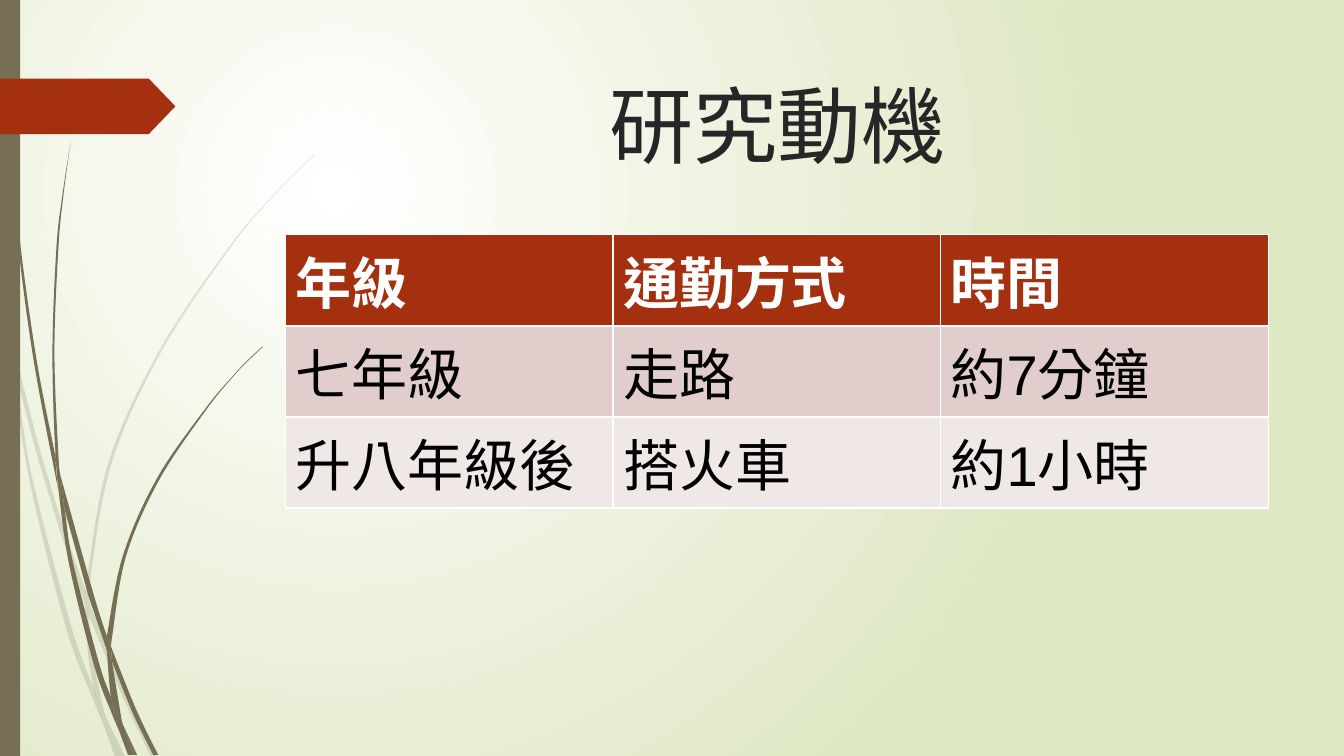
from lxml import etree
from pptx import Presentation, util as u
from pptx.dml.color import RGBColor
from pptx.enum import lang, shapes, text
from pptx.oxml import ns

PX = 9144
OLIVE, RUST, WHITE = "766F54", "A53010", "FFFFFF"

PALE_BLADES = [
    [[(11, 350), (9, 322), (0, 282)], [(0, 299), (10, 344), (11, 350)]],
    [[(58, 522), (84, 599)], [(85, 586), (62, 520), (36, 433), (14, 345)],
     [(17, 376), (36, 449), (58, 522)]],
    [[(92, 607), (88, 596)], [(88, 610), (123, 694), (150, 751)],
     [(155, 751), (127, 692), (92, 607)]],
    [[(119, 751), (124, 751)], [(105, 711), (119, 751)]],
    [[(93, 683), (70, 619), (31, 469), (17, 376), (11, 350)],
     [(11, 350), (28, 470), (65, 621), (92, 693), (101, 714)], [(99, 707), (93, 683)]],
    [[(84, 599), (87, 646), (93, 683), (96, 692), (105, 711)],
     [(103, 706), (91, 646), (88, 610)], [(88, 608), (84, 599)]],
    [[(88, 584), (110, 462), (160, 349), (229, 245), (268, 198), (290, 175), (312, 154)],
     [(312, 153), (289, 175), (268, 197), (228, 244), (158, 348), (107, 461), (85, 584)],
     [(85, 586), (88, 596)]],
    [[(101, 714), (114, 751)], [(119, 751), (101, 714)]],
    [[(88, 608), (88, 610)], [(88, 596), (85, 586)], [(84, 599), (88, 608)]],
    [[(96, 692), (93, 683)], [(99, 707), (101, 714), (119, 751)], [(105, 711), (96, 692)]],
]
DARK_BLADES = [
    [[(7, 110), (17, 233), (33, 355), (56, 477), (57, 481)],
     [(55, 457), (55, 453), (36, 355), (19, 232), (8, 109), (5, 48), (4, 0)],
     [(3, 0), (4, 48), (7, 110)]],
    [[(88, 592), (106, 645)], [(106, 633), (106, 631), (93, 590), (60, 472)],
     [(64, 505), (88, 592)]],
    [[(113, 649), (110, 641)], [(111, 656), (132, 708), (152, 749)],
     [(157, 749), (136, 706), (113, 649)]],
    [[(110, 691), (98, 657), (72, 556), (64, 505), (57, 477)],
     [(57, 477), (68, 557), (93, 659), (111, 708), (117, 722)], [(116, 717), (110, 691)]],
    [[(60, 472), (58, 453), (54, 349), (58, 245), (63, 193), (70, 141)],
     [(70, 141), (62, 193), (56, 245), (52, 349), (55, 449), (60, 472)]],
    [[(133, 749), (136, 749)], [(122, 719), (133, 749)]],
    [[(57, 477), (64, 505)], [(60, 472), (55, 449)], [(55, 453), (57, 477)]],
    [[(111, 633), (125, 552), (158, 476), (205, 406), (231, 374), (245, 359), (261, 344)],
     [(260, 344), (245, 358), (231, 373), (204, 405), (156, 474), (122, 551), (106, 631)],
     [(110, 641), (111, 633)]],
    [[(117, 722), (127, 749)], [(131, 749), (117, 722)]],
    [[(106, 645), (110, 691), (116, 706), (122, 719)],
     [(121, 716), (111, 656)], [(109, 651), (106, 645)]],
    [[(106, 645), (109, 651), (111, 656)], [(110, 641), (106, 631)], [(106, 633), (106, 645)]],
    [[(116, 706), (110, 691)], [(116, 717), (117, 722), (130, 749)],
     [(133, 749), (122, 719), (116, 706)]],
]
COMMUTES = [
    ["年級", "通勤方式", "時間"],
    ["七年級", "走路", "約7分鐘"],
    ["升八年級後", "搭火車", "約1小時"],
]


def px(length):
    """Turn px into EMU."""
    return u.Emu(round(length * PX))


def rgb(code):
    """Turn a hex string into a colour."""
    return RGBColor.from_string(code)


def paint(shape, code):
    """Fill a shape flat, without line or shadow."""
    shape.fill.solid()
    shape.fill.fore_color.rgb = rgb(code)
    shape.line.fill.background()
    shape.shadow.inherit = False


def style_run(run, font, size, code, bold=False):
    """Format a run of Traditional Chinese text."""
    run.font.name, run.font.size, run.font.bold = font, u.Pt(size), bold
    run.font.color.rgb = rgb(code)
    run.font.language_id = lang.MSO_LANGUAGE_ID.TRADITIONAL_CHINESE


def bend(line, before, start, end, after):
    """Turn a line segment into a curve that follows its neighbours."""
    curve = etree.Element(ns.qn("a:cubicBezTo"))
    first = [s + (e - b) / 6 for b, s, e in zip(before, start, end)]
    second = [e - (a - s) / 6 for s, e, a in zip(start, end, after)]
    for x, y in (first, second, end):
        etree.SubElement(curve, ns.qn("a:pt"), x=str(round(x)), y=str(round(y)))
    line.getparent().replace(line, curve)


def add_blade(group, left, top, edges):
    """Draw a blade whose edges are curved and meet at corners."""
    outline = [(px(left + x), px(top + y)) for edge in edges for x, y in edge]
    builder = group.shapes.build_freeform(*outline[0], scale=1.0)
    builder.add_line_segments(outline[1:], close=True)
    blade = builder.convert_to_shape()
    lines = list(blade._element.iter(ns.qn("a:lnTo")))
    corner = (min(x for x, _ in outline), min(y for _, y in outline))
    start = 0
    for edge in edges:
        knots = [(x - corner[0], y - corner[1]) for x, y in outline[start:start + len(edge)]]
        knots = [knots[0], *knots, knots[-1]]
        for step in range(len(edge) - 1):
            bend(lines[start + step], *knots[step:step + 4])
        start += len(edge)
    paint(blade, OLIVE)
    return blade


def add_grass(slide, left, top, blades, opacity=100):
    """Draw one tuft of grass as a group of blades."""
    tuft = slide.shapes.add_group_shape()
    for edges in blades:
        blade = add_blade(tuft, left, top, edges)
        if opacity < 100:
            tint = blade.fill._xPr.find(".//" + ns.qn("a:srgbClr"))
            etree.SubElement(tint, ns.qn("a:alpha"), val=str(opacity * 1000))


def add_backdrop(slide):
    """Set the glow that spreads from the upper left."""
    glow = slide.background.fill
    glow.gradient()
    for stop, code in zip(glow.gradient_stops, (WHITE, "DFE8C4")):
        stop.color.rgb = rgb(code)
    linear = slide.background._cSld.find(".//" + ns.qn("a:lin"))
    circle = etree.Element(ns.qn("a:path"), path="circle")
    etree.SubElement(circle, ns.qn("a:fillToRect"), l="50000", t="50000", r="100000", b="100000")
    linear.getparent().replace(linear, circle)


def add_margin(slide, left, top, height):
    """Draw the grass, side bar and arrow tag of the left margin."""
    add_grass(slide, left, top, PALE_BLADES, opacity=20)
    add_grass(slide, left, top, DARK_BLADES)
    bar = slide.shapes.add_shape(shapes.MSO_SHAPE.RECTANGLE, px(left), px(top), px(20), px(height))
    paint(bar, OLIVE)
    tag = slide.shapes.add_shape(
        shapes.MSO_SHAPE.PENTAGON, px(left), px(top + 78), px(174), px(55))
    tag.adjustments[0] = 0.48
    paint(tag, RUST)


def add_title(slide, left, top, width, height):
    """Place the centred heading."""
    title = slide.shapes.title
    title.left, title.top, title.width, title.height = map(px, (left, top, width, height))
    frame = title.text_frame
    frame.text = "研究動機"
    frame.auto_size = text.MSO_AUTO_SIZE.NONE
    frame.vertical_anchor = text.MSO_ANCHOR.TOP
    frame.paragraphs[0].alignment = text.PP_ALIGN.CENTER
    style_run(frame.paragraphs[0].runs[0], "TeX Gyre Adventor", 60, "262626")


def add_commute_table(slide, left, top, width, height):
    """Place the table of commutes, whose rows grow to fit their text."""
    rows, columns = len(COMMUTES), len(COMMUTES[0])
    frame = slide.shapes.add_table(
        rows, columns, px(left), px(top), px(width), px(41 * rows))
    frame.height = px(height)
    for r, (commute, band) in enumerate(zip(COMMUTES, (RUST, "E1CDCC", "F0E8E7"))):
        for c, words in enumerate(commute):
            cell = frame.table.cell(r, c)
            cell.text = words
            cell.fill.solid()
            cell.fill.fore_color.rgb = rgb(band)
            heading = r == 0
            style_run(cell.text_frame.paragraphs[0].runs[0], "Arial", 40,
                      WHITE if heading else "000000", heading)


def main():
    """Build the slide and save it."""
    deck = Presentation()
    deck.slide_width, deck.slide_height = px(1333), px(750)
    slide = deck.slides.add_slide(deck.slide_layouts[5])
    add_backdrop(slide)
    add_margin(slide, 0, 0, 750)
    add_title(slide, 284, 68, 975, 140)
    add_commute_table(slide, 283, 233, 975, 230)
    deck.save("out.pptx")


if __name__ == "__main__":
    main()
